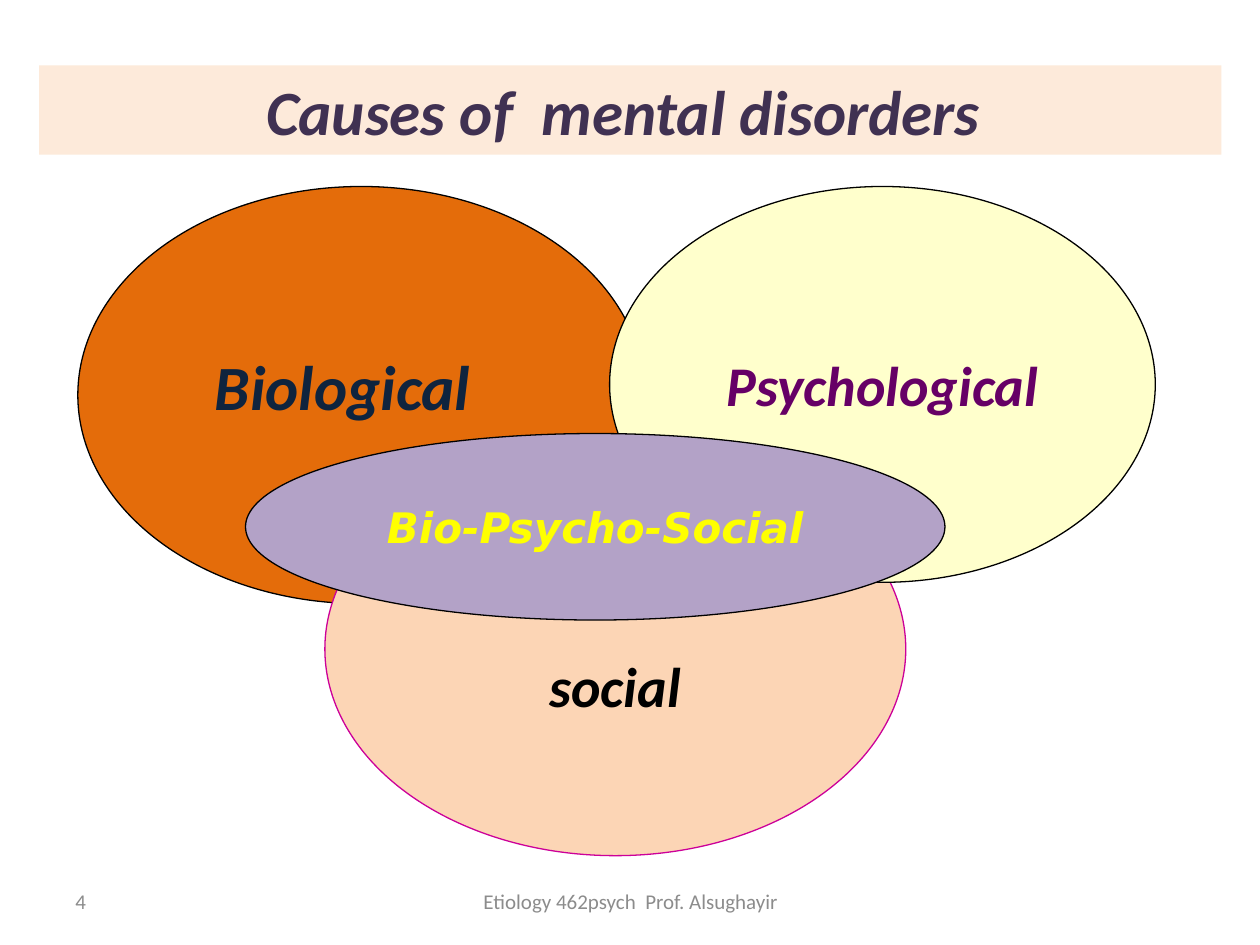
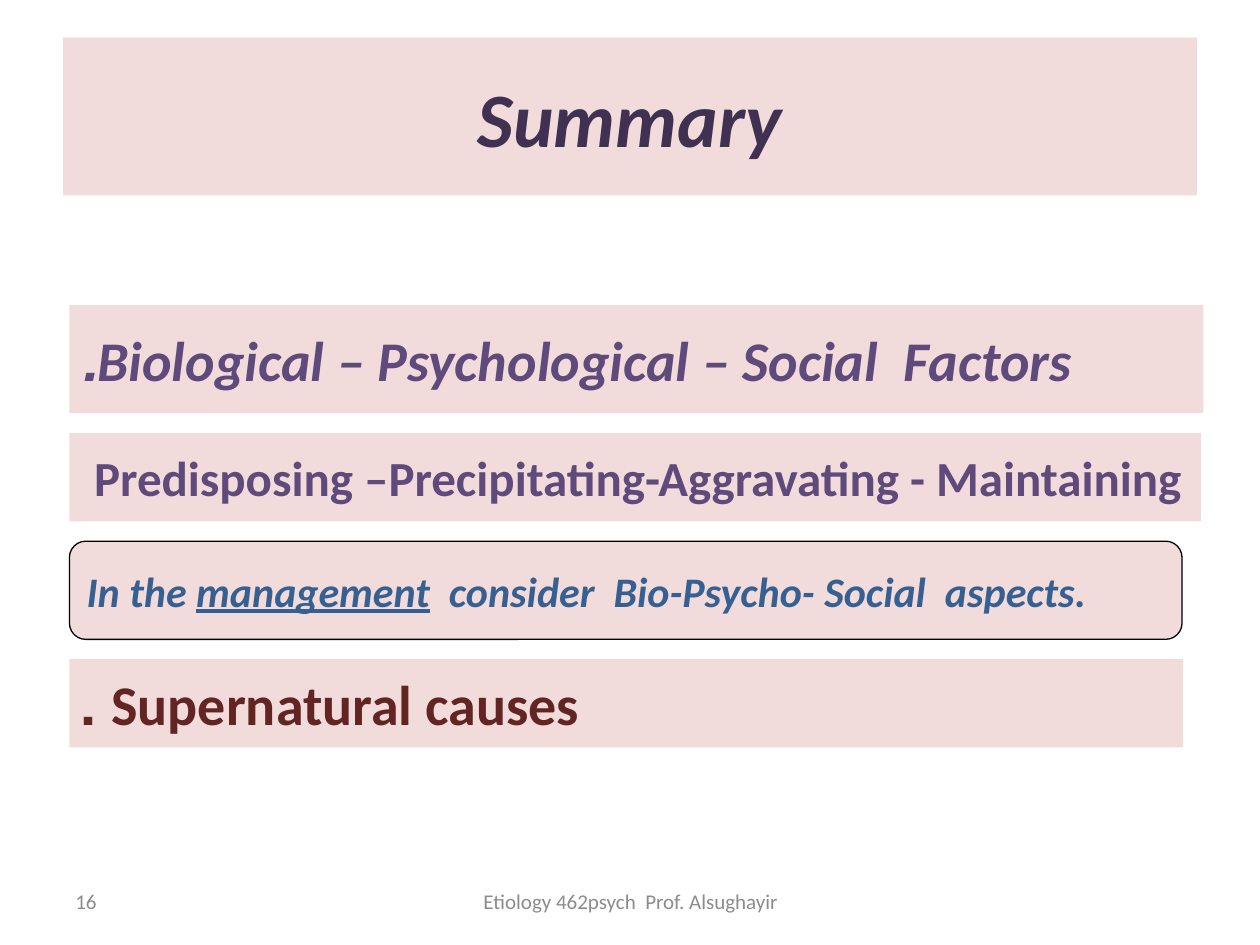
from pptx import Presentation
from pptx.dml.color import RGBColor
from pptx.enum.shapes import MSO_SHAPE as Shape
from pptx.enum.text import MSO_ANCHOR as Anchor, MSO_AUTO_SIZE as AutoSize, PP_ALIGN as Align
from pptx.util import Cm, Pt

DARK_PURPLE = "403152"
PURPLE = "604A7B"
BLUE = "376092"
ROSE = "F2DCDB"
GREY = "8C8C8C"
BLACK = "000000"
FOOTER = "Etiology 462psych  Prof. Alsughayir"


def paint(box, fill, line=None):
    box.fill.solid()
    box.fill.fore_color.rgb = RGBColor.from_string(fill)
    if line:
        box.line.color.rgb = RGBColor.from_string(line)
        box.line.width = Pt(0.75)
    else:
        box.line.fill.background()


def write(box, texts, size, colour, align=Align.LEFT, bold=True, italic=True,
          font="Calibri", underlined=None, right_to_left=False):
    frame = box.text_frame
    frame.word_wrap = True
    frame.auto_size = AutoSize.NONE
    frame.vertical_anchor = Anchor.MIDDLE
    para = frame.paragraphs[0]
    para.alignment = align
    if right_to_left:
        para._p.get_or_add_pPr().set("rtl", "1")
    for text in texts:
        span = para.add_run()
        span.text = text
        span.font.name = font
        span.font.size = Pt(size)
        span.font.bold = bold
        span.font.italic = italic
        span.font.color.rgb = RGBColor.from_string(colour)
        if text == underlined:
            span.font.underline = True


deck = Presentation()
deck.slide_width = Cm(25.4)
deck.slide_height = Cm(19.05)

pages = []
for title, size, fill, place, number in [
    ("Causes of  mental disorders ", 36, "FDEADA", (0.79, 1.32, 23.83, 1.8), "4"),
    ("Summary", 44, ROSE, (1.27, 0.76, 22.86, 3.18), "16"),
]:
    page = deck.slides.add_slide(deck.slide_layouts[5])
    pages.append(page)
    heading = page.shapes.title
    heading.left, heading.top, heading.width, heading.height = map(Cm, place)
    paint(heading, fill)
    write(heading, [title], size, DARK_PURPLE, Align.CENTER)
    for text, left, width, align in [
        (number, 1.27, 5.92, Align.LEFT),
        (FOOTER, 8.69, 8.05, Align.CENTER),
    ]:
        box = page.shapes.add_textbox(Cm(left), Cm(17.65), Cm(width), Cm(1.02))
        write(box, [text], 12, GREY, align, bold=False, italic=False)

causes_page, summary_page = pages

for text, place, fill, line, size, colour, font, margins in [
    ("Biological", (1.57, 3.76, 11.43, 8.41), "E46C0A", BLACK, 36, "0F243E", "Calibri", (0.13, 1, 0.53)),
    ("social", (6.55, 8.92, 11.71, 8.33), "FCD5B5", "CC0099", 32, BLACK, "Calibri", (1.6, 0.25, 0.13)),
    ("Psychological", (12.29, 3.76, 11, 7.98), "FFFFCC", BLACK, 32, "660066", "Calibri", (0.13, 0.25, 0.13)),
    ("Bio-Psycho-Social", (4.95, 8.74, 14.1, 3.76), "B3A2C7", BLACK, 24, "FFFF00", "DejaVu Sans", (0.13, 0.25, 0.13)),
]:
    oval = causes_page.shapes.add_shape(Shape.OVAL, *map(Cm, place))
    oval.shadow.inherit = False
    paint(oval, fill, line)
    write(oval, [text], size, colour, Align.CENTER, font=font)
    frame = oval.text_frame
    frame.margin_top, frame.margin_right, frame.margin_bottom = map(Cm, margins)

top = 6.15
for texts, kind, width, height, size, colour, italic, line, left_margin in [
    (["Biological – Psychological – Social  Factors."],
     Shape.RECTANGLE, 22.86, 2.18, 32, PURPLE, True, None, 0.25),
    (["Predisposing –Precipitating-Aggravating - Maintaining"],
     Shape.RECTANGLE, 22.81, 1.78, 28, PURPLE, False, None, 0.5),
    (["In the ", "management", "  consider  Bio-Psycho- Social  aspects."],
     Shape.ROUNDED_RECTANGLE, 22.43, 1.98, 24, BLUE, True, BLACK, 0.25),
    (["Supernatural causes ."],
     Shape.RECTANGLE, 22.45, 1.78, 32, "632523", False, None, 0.25),
]:
    row = summary_page.shapes.add_shape(kind, Cm(1.4), Cm(top), Cm(width), Cm(height))
    row.shadow.inherit = False
    paint(row, ROSE, line)
    write(row, texts, size, colour, italic=italic, underlined="management",
          right_to_left=kind == Shape.RECTANGLE)
    row.text_frame.margin_left = Cm(left_margin)
    row.text_frame.margin_right = Cm(0.1)
    top += height + 0.4

deck.save("out.pptx")
